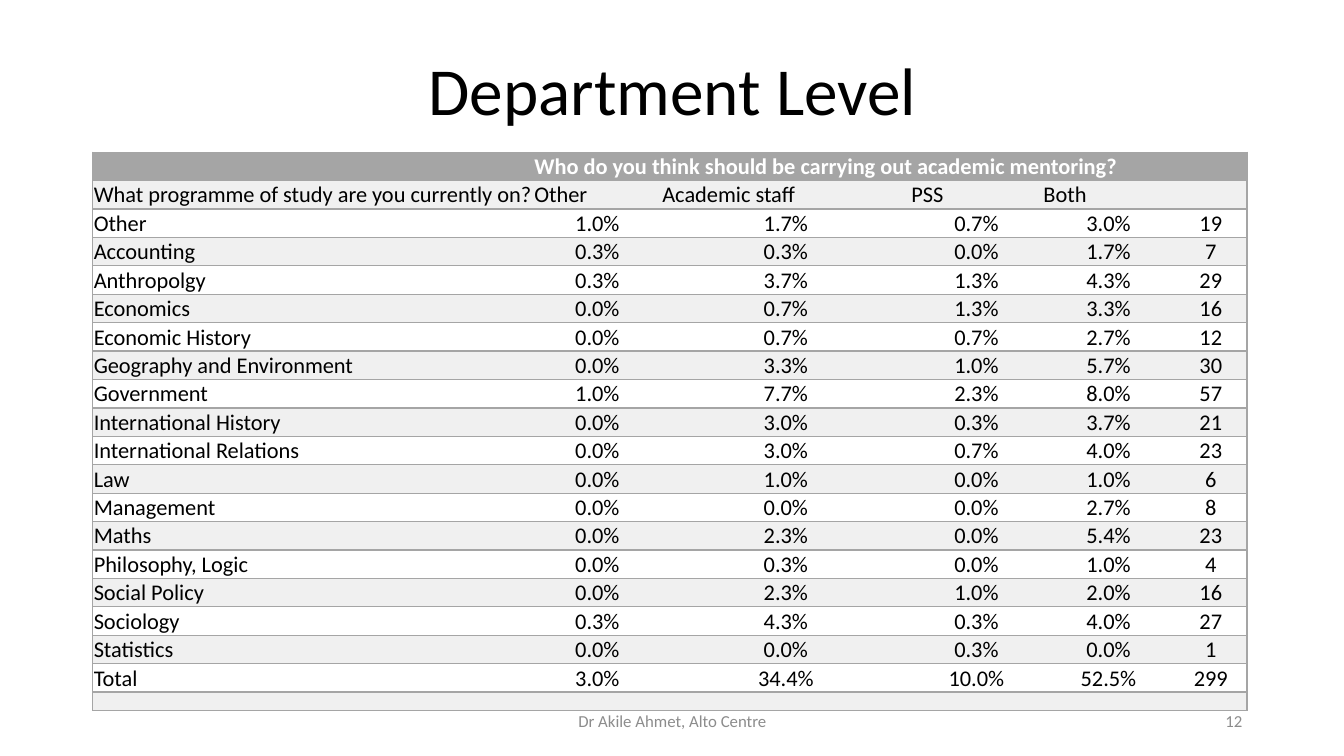
from dataclasses import dataclass

from lxml.etree import SubElement
from pptx import Presentation
from pptx.dml.color import RGBColor as RGB
from pptx.enum.text import MSO_ANCHOR as ANCHOR, PP_ALIGN as ALIGN
from pptx.oxml.ns import qn
from pptx.util import Inches, Pt


@dataclass(frozen=True)
class Theme:
    font: str = "Calibri"
    text: str = "000000"
    header_text: str = "FFFFFF"
    muted: str = "8C8C8C"
    line: str = "A5A5A5"
    bands: tuple = ("FFFFFF", "F0F0F0")
    title_size: int = 48
    table_size: int = 16
    footer_size: int = 12
    empty_size: int = 10


THEME = Theme()
NO_STYLE = "{2D5ABB26-0587-4C30-8999-92F81FD0307C}"
COLUMNS = (4.37, 1.27, 2.47, 1.31, 1.31, 0.72)
ROW_HEIGHT, LAST_HEIGHT = 0.25, 0.18

ROWS = [
    ("", "Who do you think should be carrying out academic mentoring?", "", "", "", ""),
    ("What programme of study are you currently on?", "Other", "Academic staff", "PSS", "Both", ""),
    ("Other", "1.0%", "1.7%", "0.7%", "3.0%", "19"),
    ("Accounting", "0.3%", "0.3%", "0.0%", "1.7%", "7"),
    ("Anthropolgy", "0.3%", "3.7%", "1.3%", "4.3%", "29"),
    ("Economics", "0.0%", "0.7%", "1.3%", "3.3%", "16"),
    ("Economic History", "0.0%", "0.7%", "0.7%", "2.7%", "12"),
    ("Geography and Environment", "0.0%", "3.3%", "1.0%", "5.7%", "30"),
    ("Government", "1.0%", "7.7%", "2.3%", "8.0%", "57"),
    ("International History", "0.0%", "3.0%", "0.3%", "3.7%", "21"),
    ("International Relations", "0.0%", "3.0%", "0.7%", "4.0%", "23"),
    ("Law", "0.0%", "1.0%", "0.0%", "1.0%", "6"),
    ("Management", "0.0%", "0.0%", "0.0%", "2.7%", "8"),
    ("Maths", "0.0%", "2.3%", "0.0%", "5.4%", "23"),
    ("Philosophy, Logic", "0.0%", "0.3%", "0.0%", "1.0%", "4"),
    ("Social Policy", "0.0%", "2.3%", "1.0%", "2.0%", "16"),
    ("Sociology", "0.3%", "4.3%", "0.3%", "4.0%", "27"),
    ("Statistics", "0.0%", "0.0%", "0.3%", "0.0%", "1"),
    ("Total", "3.0%", "34.4%", "10.0%", "52.5%", "299"),
    ("", "", "", "", "", ""),
]


def set_attrs(obj, values):
    for name, value in values.items():
        setattr(obj, name, value)


def write(p, text, size, color, align=ALIGN.LEFT, bold=False):
    p.alignment = align
    r = p.add_run()
    r.text = text
    set_attrs(r.font, {"name": THEME.font, "size": Pt(size), "bold": bold})
    r.font.color.rgb = RGB.from_string(color)


def add_title(slide, text):
    sp = slide.shapes.title
    set_attrs(sp, {"left": Inches(0.92), "top": Inches(0.32),
                   "width": Inches(11.5), "height": Inches(1.02)})
    tf = sp.text_frame
    set_attrs(tf, {"vertical_anchor": ANCHOR.BOTTOM, "word_wrap": True})
    p = tf.paragraphs[0]
    p.line_spacing = 0.9
    write(p, text, THEME.title_size, THEME.text, ALIGN.CENTER)


def add_footer(slide, text, left, width, align):
    sp = slide.shapes.add_textbox(Inches(left), Inches(6.95), Inches(width), Inches(0.4))
    tf = sp.text_frame
    set_attrs(tf, {"vertical_anchor": ANCHOR.MIDDLE, "word_wrap": True})
    write(tf.paragraphs[0], text, THEME.footer_size, THEME.muted, align)


def add_borders(cell, sides):
    tc_pr = cell._tc.get_or_add_tcPr()
    for side in sides:
        ln = SubElement(tc_pr, qn(f"a:ln{side}"), w=str(Pt(1)))
        fill = SubElement(ln, qn("a:solidFill"))
        SubElement(fill, qn("a:srgbClr"), val=THEME.line)


def format_cell(cell, text, row, col):
    header = row == 0
    # Outer sides in the first and last column, rules between all rows
    sides = {0: "LTB", len(COLUMNS) - 1: "RTB"}.get(col, "TB")
    add_borders(cell, sides)
    cell.fill.solid()
    cell.fill.fore_color.rgb = RGB.from_string(THEME.line if header else THEME.bands[row % 2])
    set_attrs(cell, {"vertical_anchor": ANCHOR.BOTTOM, "margin_left": Inches(0.01),
                     "margin_right": Inches(0.01), "margin_top": Inches(0.01),
                     "margin_bottom": 0})
    p = cell.text_frame.paragraphs[0]
    if text:
        align = ALIGN.CENTER if row > 1 and col > 0 else ALIGN.LEFT
        color = THEME.header_text if header else THEME.text
        write(p, text, THEME.table_size, color, align, header)
    else:
        # Small type keeps the empty row low
        SubElement(p._p, qn("a:endParaRPr"), sz=str(THEME.empty_size * 100))


def add_survey_table(slide):
    height = ROW_HEIGHT * (len(ROWS) - 1) + LAST_HEIGHT
    frame = slide.shapes.add_table(len(ROWS), len(COLUMNS), Inches(0.92), Inches(1.51),
                                   Inches(sum(COLUMNS)), Inches(height))
    table = frame.table
    set_attrs(table, {"first_row": False, "horz_banding": False})
    table._tbl.find(f".//{qn('a:tableStyleId')}").text = NO_STYLE
    for column, width in zip(table.columns, COLUMNS):
        column.width = Inches(width)
    for row in table.rows:
        row.height = Inches(ROW_HEIGHT)
    table.rows[len(ROWS) - 1].height = Inches(LAST_HEIGHT)
    for i, values in enumerate(ROWS):
        for j, text in enumerate(values):
            format_cell(table.cell(i, j), text, i, j)
    # The question spans the four answer columns
    table.cell(0, 1).merge(table.cell(0, 4))


def main():
    prs = Presentation()
    set_attrs(prs, {"slide_width": Inches(13.33), "slide_height": Inches(7.5)})
    slide = prs.slides.add_slide(prs.slide_layouts[5])
    add_title(slide, "Department Level")
    add_survey_table(slide)
    add_footer(slide, "Dr Akile Ahmet, Alto Centre", 4.42, 4.5, ALIGN.CENTER)
    add_footer(slide, "12", 9.42, 3, ALIGN.RIGHT)
    prs.save("out.pptx")


if __name__ == "__main__":
    main()
